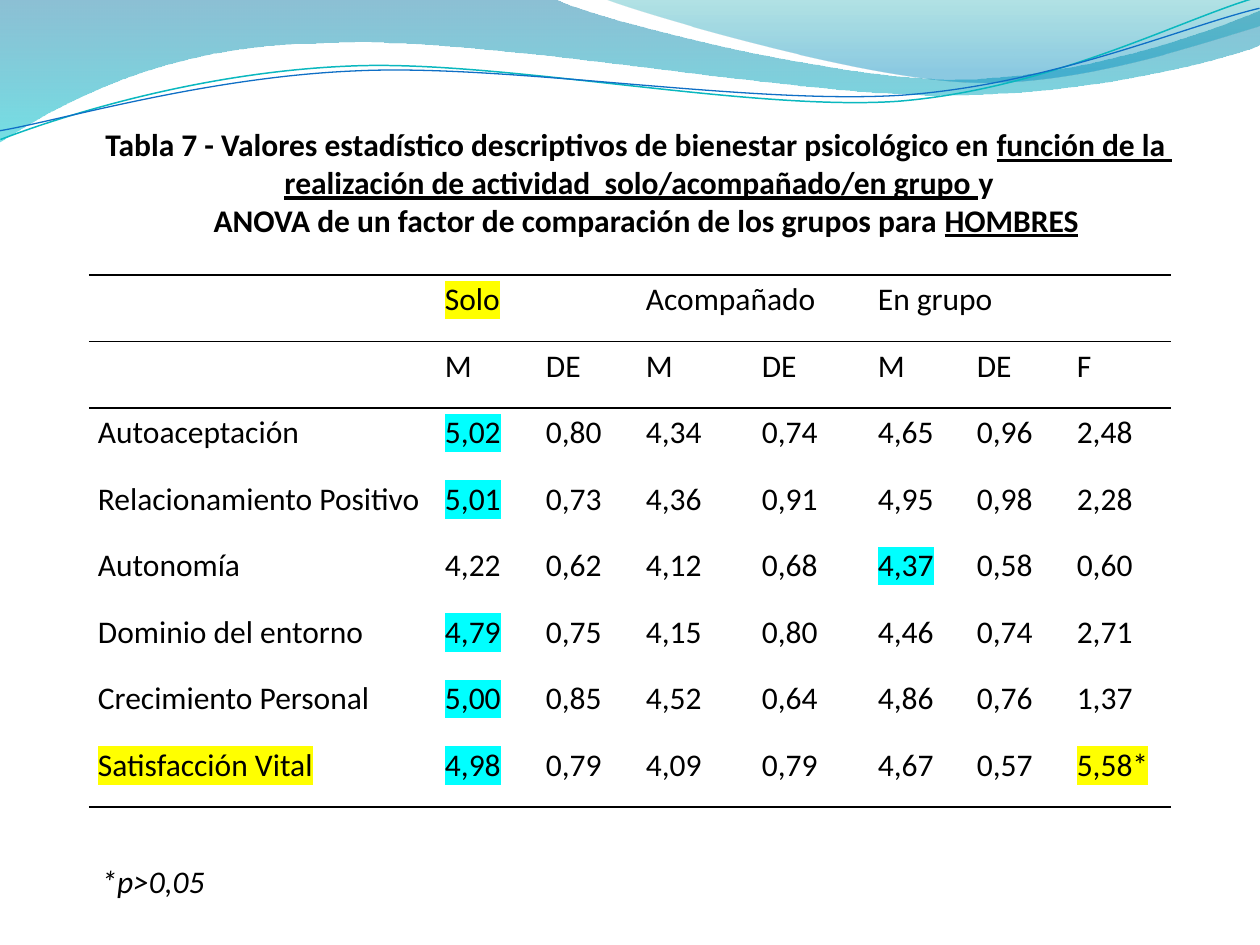
"""Build the slide with the well-being table for men, by type of company."""
from lxml.etree import SubElement
from pptx import Presentation
from pptx.dml.color import RGBColor
from pptx.enum.text import MSO_ANCHOR, MSO_AUTO_SIZE, PP_ALIGN
from pptx.oxml.ns import qn
from pptx.util import Pt

PX = 914400 / 126
FONT = "Calibri"
HUES = {
    "ink": "000000", "yellow": "FFFF00", "cyan": "00FFFF",
    "steel": "0074A1", "aqua": "00C6CF", "teal": "00A1A9",
    "sky": "008BBF", "mint": "0AB8BF", "blue": "0F6FC6",
}
BANDS = [
    ([(0, -1), (554, -1), (600, 21, 837, 79, 955, 79),
      (1075, 79, 1207, 33, 1260, 11), (1261, 45),
      (1239, 55, 1096, 96, 940, 95), (784, 95, 481, 35, 324, 43),
      (163, 44, 58, 105, -1, 142)],
     [(0, "steel", 45), (1, "aqua", 55)]),
    ([(604, -1), (641, 14, 859, 78, 969, 82),
      (1079, 87, 1211, 40, 1260, 26), (1260, 0)],
     [(0, "teal", 30), (0.8, "sky", 45)]),
]
TILT = 357.3
LINES = [
    ([(-2, 110), (58, 90, 199, 52, 350, 53), (499, 53, 745, 117, 896, 114),
      (1049, 109, 1184, 45, 1260, 27)], "mint", 0.85),
    ([(-2, 101), (57, 94, 207, 57, 357, 58), (509, 58, 750, 111, 902, 108),
      (1052, 104, 1187, 52, 1262, 38)], "blue", 0.75),
]
TITLE = [
    [("Tabla 7 - Valores estadístico descriptivos de bienestar psicológico en ", False),
     ("función de la ", True)],
    [("realización de actividad  solo/acompañado/en grupo ", True), ("y", False)],
    [("  ANOVA de un factor de comparación de los grupos para ", False),
     ("HOMBRES", True)],
]
NOTE = "*p>0,05"
ROWS = [
    ["", "Solo", "", "Acompañado", "", "En grupo", "", ""],
    ["", "M", "DE", "M", "DE", "M", "DE", "F"],
    ["Autoaceptación", "5,02", "0,80", "4,34", "0,74", "4,65", "0,96", "2,48"],
    ["Relacionamiento Positivo", "5,01", "0,73", "4,36", "0,91", "4,95", "0,98", "2,28"],
    ["Autonomía", "4,22", "0,62", "4,12", "0,68", "4,37", "0,58", "0,60"],
    ["Dominio del entorno", "4,79", "0,75", "4,15", "0,80", "4,46", "0,74", "2,71"],
    ["Crecimiento Personal", "5,00", "0,85", "4,52", "0,64", "4,86", "0,76", "1,37"],
    ["Satisfacción Vital", "4,98", "0,79", "4,09", "0,79", "4,67", "0,57", "5,58*"],
]
MARKS = {
    (0, 1): "yellow", (2, 1): "cyan", (3, 1): "cyan", (4, 5): "cyan",
    (5, 1): "cyan", (6, 1): "cyan", (7, 0): "yellow", (7, 1): "cyan",
    (7, 7): "yellow",
}
SIDES = ("lnL", "lnR", "lnT", "lnB")
RULES = {0: ("lnT", "lnB"), 1: ("lnT", "lnB"), 2: ("lnT",), 7: ("lnB",)}
WIDTHS = [347, 101, 100, 116, 116, 99, 100, 103]
LEFT, TOP, HIGH = 89, 275, 532
PLAIN = "{2D5ABB26-0587-4C30-8999-92F81FD0307C}"


def emu(px):
    return round(px * PX)


def hue(name):
    return RGBColor.from_string(HUES[name])


def place(shape, *box):
    shape.left, shape.top, shape.width, shape.height = map(emu, box)


def draw(slide, parts, close):
    """Draw an outline whose six-number parts are cubic curves."""
    first, *rest = [(emu(part[i]), emu(part[i + 1]))
                    for part in parts for i in range(0, len(part), 2)]
    pen = slide.shapes.build_freeform(*first)
    pen.add_line_segments(rest, close=close)
    shape = pen.convert_to_shape()
    shape.shadow.inherit = False
    steps = iter(list(shape.element.iter(qn("a:lnTo"))))
    for part in parts[1:]:
        step = next(steps)
        if len(part) == 6:
            step.addprevious(curve := step.makeelement(qn("a:cubicBezTo")))
            for node in (step, next(steps), next(steps)):
                curve.append(node[0])
                node.getparent().remove(node)
    return shape


def add_band(slide, parts, stops):
    shape = draw(slide, parts, True)
    shape.line.fill.background()
    shape.fill.gradient()
    shape.fill.gradient_angle = 270
    for stop, (spot, name, _) in zip(shape.fill.gradient_stops, stops):
        stop.position = spot
        stop.color.rgb = hue(name)
    for node, (_, _, alpha) in zip(shape.element.iter(qn("a:srgbClr")), stops):
        SubElement(node, qn("a:alpha"), val=str(alpha * 1000))


def add_line(slide, parts, name, width):
    shape = draw(slide, parts, False)
    shape.rotation = TILT
    shape.fill.background()
    shape.line.color.rgb = hue(name)
    shape.line.width = Pt(width)


def add_run(para, text, bold=False, italic=False, under=False):
    run = para.add_run()
    run.text = text
    font = run.font
    font.size, font.bold, font.italic, font.underline = Pt(18), bold, italic, under
    font.color.rgb = hue("ink")
    font.name = FONT
    return run


def mark(run, name):
    props = run._r.get_or_add_rPr()
    glow = SubElement(props, qn("a:highlight"))
    SubElement(glow, qn("a:srgbClr"), val=HUES[name])
    props.find(qn("a:latin")).addprevious(glow)


def rule(cell, shown):
    props = cell._tc.get_or_add_tcPr()
    for spot, side in enumerate(SIDES):
        line = SubElement(props, qn("a:" + side), w=str(Pt(1)))
        if side in shown:
            fill = SubElement(line, qn("a:solidFill"))
            SubElement(fill, qn("a:srgbClr"), val=HUES["ink"])
        else:
            SubElement(line, qn("a:noFill"))
        props.insert(spot, line)


def add_title(slide):
    title = slide.shapes.title
    place(title, LEFT, 118, 1100, 128)
    frame = title.text_frame
    frame.word_wrap = False
    frame.auto_size = MSO_AUTO_SIZE.NONE
    frame.vertical_anchor = MSO_ANCHOR.MIDDLE
    for i, line in enumerate(TITLE):
        para = frame.add_paragraph() if i else frame.paragraphs[0]
        para.alignment = PP_ALIGN.CENTER
        for text, under in line:
            add_run(para, text, bold=True, under=under)
    slide.shapes.element.append(title.element)


def add_note(slide):
    box = slide.shapes.add_textbox(*map(emu, (88, 856, 130, 89)))
    box.text_frame.word_wrap = False
    para = box.text_frame.paragraphs[0]
    para.alignment = PP_ALIGN.CENTER
    add_run(para, NOTE, italic=True)


def add_grid(slide):
    box = map(emu, (LEFT, TOP, sum(WIDTHS), HIGH))
    table = slide.shapes.add_table(len(ROWS), len(WIDTHS), *box).table
    table.first_row = table.horz_banding = False
    next(table._tbl.iter(qn("a:tableStyleId"))).text = PLAIN
    for col, width in zip(table.columns, WIDTHS):
        col.width = emu(width)
    for r, row in enumerate(ROWS):
        table.rows[r].height = emu(HIGH / len(ROWS))
        for c, text in enumerate(row):
            cell = table.cell(r, c)
            cell.fill.background()
            cell.margin_left = cell.margin_right = emu(9)
            cell.margin_top = cell.margin_bottom = 0
            rule(cell, RULES.get(r, ()))
            if text:
                para = cell.text_frame.paragraphs[0]
                para.alignment = PP_ALIGN.JUSTIFY
                para.line_spacing = 1.15
                run = add_run(para, text)
                if (r, c) in MARKS:
                    mark(run, MARKS[r, c])
    for c in (1, 3, 5):
        table.cell(0, c).merge(table.cell(0, c + 1))


def main():
    deck = Presentation()
    deck.slide_width, deck.slide_height = emu(1260), emu(945)
    slide = deck.slides.add_slide(deck.slide_layouts[5])
    for band in BANDS:
        add_band(slide, *band)
    for line in LINES:
        add_line(slide, *line)
    add_title(slide)
    add_note(slide)
    add_grid(slide)
    deck.save("out.pptx")


if __name__ == "__main__":
    main()
